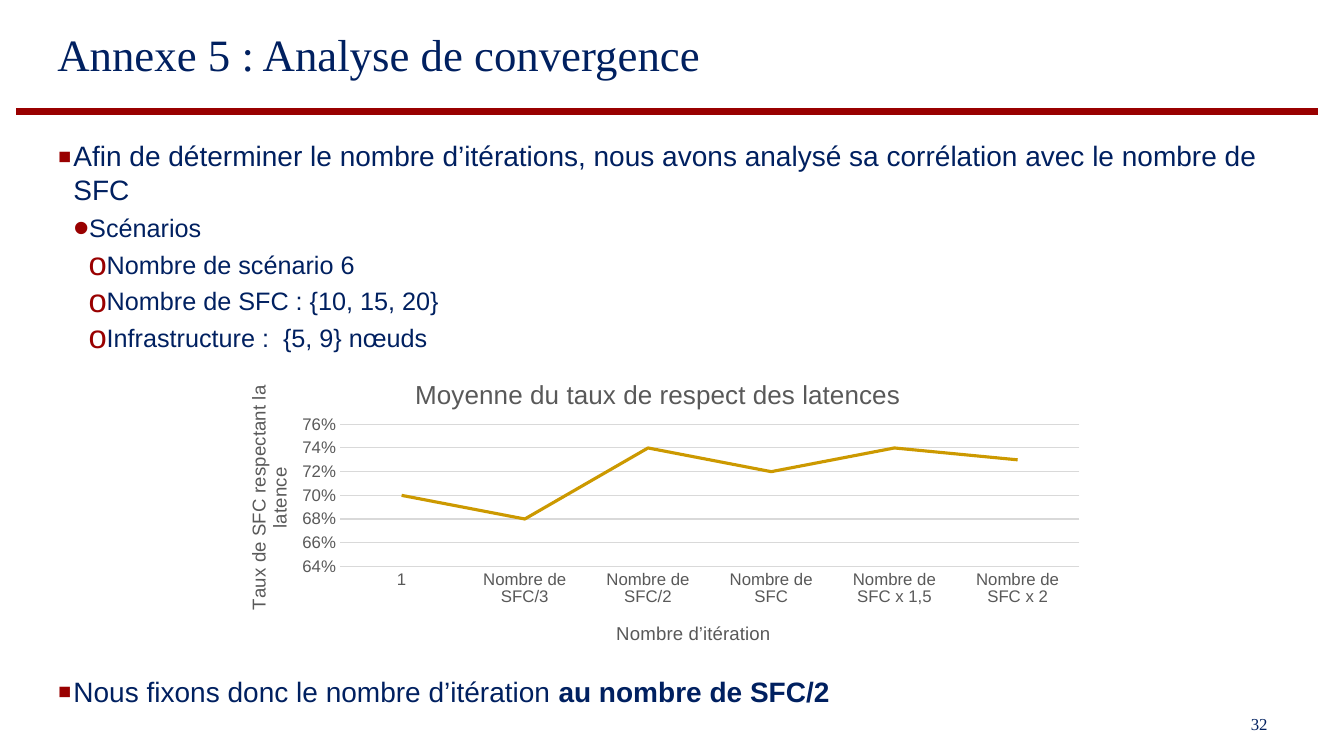
from lxml import etree
from pptx import Presentation
from pptx.chart.data import CategoryChartData
from pptx.dml.color import RGBColor
from pptx.enum.chart import XL_CHART_TYPE, XL_MARKER_STYLE, XL_TICK_MARK
from pptx.enum.shapes import MSO_CONNECTOR
from pptx.enum.text import MSO_ANCHOR, PP_ALIGN
from pptx.oxml import parse_xml
from pptx.oxml.ns import qn
from pptx.util import Inches, Pt

LINE_CHART = XL_CHART_TYPE.LINE
NO_MARKER = XL_MARKER_STYLE.NONE
NO_TICK = XL_TICK_MARK.NONE
STRAIGHT = MSO_CONNECTOR.STRAIGHT
TOP, MIDDLE, BOTTOM = MSO_ANCHOR.TOP, MSO_ANCHOR.MIDDLE, MSO_ANCHOR.BOTTOM
LEFT, RIGHT = PP_ALIGN.LEFT, PP_ALIGN.RIGHT

NAVY, RED, GOLD, GREY, GRID = "002060", "990000", "CC9900", "595959", "D9D9D9"
SANS, SERIF = "Arial", "Times New Roman"

# Per level: bullet, bullet size %, text size, left margin, hanging indent
LEVELS = [("▪", 150, 20, 0.16, 0.16),
          ("•", 180, 18, 0.31, 0.15),
          ("o", 130, 18, 0.47, 0.16)]

SCENARIO = [
    (0, [("Afin de déterminer le nombre d’itérations, nous avons analysé "
          "sa corrélation avec le nombre de SFC", False)]),
    (1, [("Scénarios", False)]),
    (2, [("Nombre de scénario 6", False)]),
    (2, [("Nombre de SFC : {10, 15, 20}", False)]),
    (2, [("Infrastructure :  {5, 9} nœuds", False)]),
]
CONCLUSION = [(0, [("Nous fixons donc le nombre d’itération ", False),
                   ("au nombre de SFC/2", True)])]

RATES = {"1": 0.70, "Nombre de SFC/3": 0.68, "Nombre de SFC/2": 0.74,
         "Nombre de SFC": 0.72, "Nombre de SFC x 1,5": 0.74,
         "Nombre de SFC x 2": 0.73}


def rgb(hex_color):
    return RGBColor.from_string(hex_color)


def set_font(font, size, color, name=SANS, bold=False):
    for key, value in {"size": Pt(size), "name": name, "bold": bold}.items():
        setattr(font, key, value)
    font.color.rgb = rgb(color)


def add_frame(slide, box, anchor=TOP):
    """Add a wrapping text box and return its text frame."""
    frame = slide.shapes.add_textbox(*map(Inches, box)).text_frame
    frame.word_wrap = True
    frame.vertical_anchor = anchor
    return frame


def add_label(slide, box, text, size, anchor, align):
    paragraph = add_frame(slide, box, anchor).paragraphs[0]
    paragraph.alignment = align
    run = paragraph.add_run()
    run.text = text
    set_font(run.font, size, NAVY, SERIF)


def add_header(slide, box):
    left, top, width, height = box
    add_label(slide, (left + 0.31, top + 0.14, 10.92, 0.78),
              "Annexe 5 : Analyse de convergence", 32, MIDDLE, LEFT)
    y = Inches(top + height)
    rule = slide.shapes.add_connector(STRAIGHT, Inches(left), y,
                                      Inches(left + width), y)
    rule.line.color.rgb = rgb(RED)
    rule.line.width = Pt(5)
    etree.SubElement(rule._element.spPr, qn("a:effectLst"))


def set_bullet(paragraph, char, percent, margin, hanging):
    props = paragraph._p.get_or_add_pPr()
    props.set("marL", str(Inches(margin)))
    props.set("indent", str(-Inches(hanging)))
    color = etree.SubElement(props, qn("a:buClr"))
    etree.SubElement(color, qn("a:srgbClr"), val=RED)
    etree.SubElement(props, qn("a:buSzPct"), val=str(percent * 1000))
    etree.SubElement(props, qn("a:buFont"), typeface=SANS)
    etree.SubElement(props, qn("a:buChar"), char=char)


def add_bullets(slide, box, items):
    frame = add_frame(slide, box)
    for index, (level, runs) in enumerate(items):
        paragraph = frame.add_paragraph() if index else frame.paragraphs[0]
        char, percent, size, margin, hanging = LEVELS[level]
        paragraph.level = level
        set_bullet(paragraph, char, percent, margin, hanging)
        if index:
            paragraph.space_before = Pt(4.5)
        for text, bold in runs:
            run = paragraph.add_run()
            run.text = text
            set_font(run.font, size, NAVY, bold=bold)


def set_layout(parent, index, **fractions):
    """Place a chart part by fractions of the chart's width and height."""
    for old in parent.findall(qn("c:layout")):
        parent.remove(old)
    layout = parse_xml('<c:layout xmlns:c="http://schemas.openxmlformats.org/'
                       'drawingml/2006/chart"><c:manualLayout/></c:layout>')
    manual = layout[0]
    if "w" in fractions:
        etree.SubElement(manual, qn("c:layoutTarget"), val="inner")
    for side in "xy":
        etree.SubElement(manual, qn(f"c:{side}Mode"), val="edge")
    for key, value in fractions.items():
        etree.SubElement(manual, qn(f"c:{key}"), val=str(value))
    parent.insert(index, layout)


def set_title(owner, text, size, x, y):
    owner.has_title = True
    title = owner.chart_title if hasattr(owner, "chart_title") else owner.axis_title
    title.text_frame.text = text
    set_font(title.text_frame.paragraphs[0].runs[0].font, size, GREY)
    set_layout(title._element, 1, x=x, y=y)


def add_rate_chart(slide, box):
    data = CategoryChartData(number_format="0%")
    data.categories = list(RATES)
    data.add_series("Series 1", list(RATES.values()))
    chart = slide.shapes.add_chart(LINE_CHART, *map(Inches, box), data).chart
    chart.has_legend = False
    set_font(chart.font, 12, GREY)
    rates, iterations = chart.value_axis, chart.category_axis

    set_title(chart, "Moyenne du taux de respect des latences", 18.6, 0.22, 0.05)
    set_title(iterations, "Nombre d’itération", 13.3, 0.45, 0.86)
    set_title(rates, "Taux de SFC respectant la latence", 13.3, 0.03, 0.08)
    set_layout(chart._chartSpace.chart.plotArea, 0, x=0.14, y=0.22, w=0.84, h=0.47)

    for axis in (rates, iterations):
        axis.major_tick_mark = axis.minor_tick_mark = NO_TICK
        set_font(axis.tick_labels.font, 12, GREY)
    for key, value in {"minimum_scale": 0.64, "maximum_scale": 0.76,
                       "major_unit": 0.02}.items():
        setattr(rates, key, value)
    rates.tick_labels.number_format = "0%"
    rates.tick_labels.number_format_is_linked = False
    rates.format.line.fill.background()

    plot = chart.plots[0]
    plot.vary_by_categories = False
    series = plot.series[0]
    series.smooth = False
    series.marker.style = NO_MARKER
    for line, color, width in ((iterations.format.line, GRID, 0.75),
                               (rates.major_gridlines.format.line, GRID, 0.75),
                               (series.format.line, GOLD, 2.25)):
        line.color.rgb = rgb(color)
        line.width = Pt(width)


def main():
    deck = Presentation()
    deck.slide_width, deck.slide_height = Inches(13.33), Inches(7.5)
    slide = deck.slides.add_slide(deck.slide_layouts[6])
    add_header(slide, (0.16, 0, 12.91, 1.11))
    add_bullets(slide, (0.47, 1.33, 12.5, 2.2), SCENARIO)
    add_rate_chart(slide, (2.15, 3.55, 8.73, 3))
    add_bullets(slide, (0.47, 6.64, 12.5, 0.42), CONCLUSION)
    add_label(slide, (11.18, 7.06, 1.49, 0.27), "32", 12, BOTTOM, RIGHT)
    deck.save("out.pptx")


if __name__ == "__main__":
    main()
